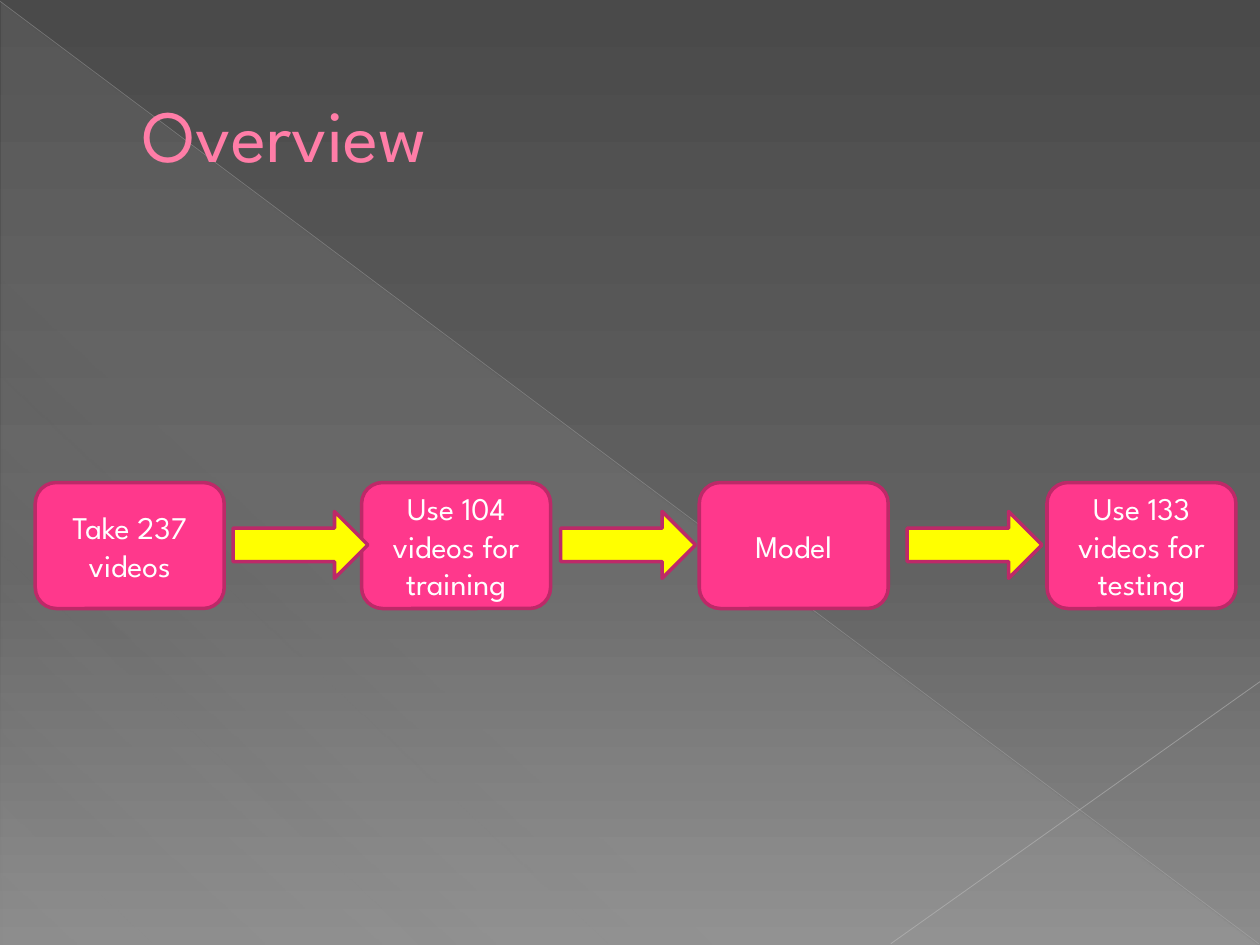
from lxml.etree import SubElement
from pptx import Presentation
from pptx.dml.color import RGBColor
from pptx.enum.shapes import MSO_CONNECTOR as Connector, MSO_SHAPE as Shape
from pptx.enum.text import MSO_ANCHOR as Anchor, PP_ALIGN as Align
from pptx.oxml import parse_xml
from pptx.oxml.ns import nsdecls, qn
from pptx.util import Inches, Pt

COLUMNS, ROWS = 100, 75


def color(hex_value):
    return RGBColor.from_string(hex_value)


def set_gradient(properties, stops, angle):
    """Replace a solid fill with (position %, colour, opacity %) stops."""
    stop_xml = "".join(
        f'<a:gs pos="{position * 1000}"><a:srgbClr val="{shade}">'
        f'<a:alpha val="{opacity * 1000}"/></a:srgbClr></a:gs>'
        for position, shade, opacity in stops)
    gradient = parse_xml(
        f'<a:gradFill {nsdecls("a")} rotWithShape="1"><a:gsLst>{stop_xml}</a:gsLst>'
        f'<a:lin ang="{angle * 60000}" scaled="0"/></a:gradFill>')
    properties.replace(properties.find(qn("a:solidFill")), gradient)


class FlowSlide:
    font = "League Spartan"
    title_color, title_edge = "FF7DA7", "B12761"
    step_fill, arrow_fill, border = "FF388C", "FFFF00", "BD2968"

    def __init__(self, deck):
        self.slide = deck.slides.add_slide(deck.slide_layouts[5])
        self.column = deck.slide_width / COLUMNS
        self.row = deck.slide_height / ROWS

    def grid(self, *lengths):
        """Turn alternating columns and rows into slide lengths."""
        units = (self.column, self.row) * 2
        return [round(length * unit) for length, unit in zip(lengths, units)]

    def background(self, stops, angle):
        self.slide.background.fill.solid()
        properties = self.slide.element.find(".//" + qn("p:bgPr"))
        set_gradient(properties, stops, angle)

    def shape(self, kind, box, fill):
        shape = self.slide.shapes.add_shape(kind, *self.grid(*box))
        shape.shadow.inherit = False
        shape.fill.solid()
        shape.fill.fore_color.rgb = color(fill)
        shape.line.color.rgb = color(self.border)
        shape.line.width = Pt(2)
        return shape

    def facet(self, box, stops, angle):
        """Add a borderless, translucent triangle."""
        triangle = self.shape(Shape.RIGHT_TRIANGLE, box, stops[0][1])
        triangle.line.fill.background()
        set_gradient(triangle.element.spPr, stops, angle)

    def hairline(self, ends, shade, width, opacity):
        line = self.slide.shapes.add_connector(Connector.STRAIGHT, *self.grid(*ends))
        line.line.color.rgb = color(shade)
        line.line.width = Pt(width)
        properties = line.element.spPr
        SubElement(properties.find(".//" + qn("a:srgbClr")), qn("a:alpha"),
                   val=str(opacity * 1000))
        SubElement(properties, qn("a:effectLst"))

    def style_run(self, run, size, shade):
        run.font.name = self.font
        run.font.size = Pt(size)
        run.font.color.rgb = color(shade)

    def title(self, text, box):
        title = self.slide.shapes.title
        title.left, title.top, title.width, title.height = self.grid(*box)
        frame = title.text_frame
        frame.text = text
        frame.vertical_anchor = Anchor.MIDDLE
        heading = frame.paragraphs[0]
        heading.alignment = Align.LEFT
        paragraph_properties = heading._p.get_or_add_pPr()
        paragraph_properties.set("marL", str(Inches(0.53)))
        paragraph_properties.set("indent", "0")
        run = heading.runs[0]
        self.style_run(run, 42, self.title_color)
        run.font._element.insert(0, parse_xml(
            f'<a:ln {nsdecls("a")} w="{Pt(0.5)}"><a:solidFill>'
            f'<a:srgbClr val="{self.title_edge}"/></a:solidFill></a:ln>'))
        # Bring the title in front of the backdrop.
        title.element.getparent().append(title.element)

    def step(self, text, left):
        box = self.shape(Shape.ROUNDED_RECTANGLE, (left, 38.3, 15, 10), self.step_fill)
        frame = box.text_frame
        frame.text = text
        frame.word_wrap = True
        frame.vertical_anchor = Anchor.MIDDLE
        frame.paragraphs[0].alignment = Align.CENTER
        self.style_run(frame.paragraphs[0].runs[0], 18, "FFFFFF")

    def arrow(self, left):
        self.shape(Shape.RIGHT_ARROW, (left, 40.6, 10.7, 5.3), self.arrow_fill)


def main():
    deck = Presentation()
    deck.slide_width, deck.slide_height = Inches(10), Inches(7.5)
    overview = FlowSlide(deck)

    overview.background(
        [(0, "4A4A4A", 100), (60, "626262", 100), (100, "8C8C8C", 100)], 90)
    overview.facet((0.1, 0.2, 99.8, 74.8),
                   [(0, "D2D2D2", 10), (70, "D2D2D2", 8), (100, "D2D2D2", 1)], 133)
    overview.hairline((0, 0.1, 99.9, 74.9), "BFBFBF", 0.39, 35)
    overview.hairline((100, 54.1, 70.7, 74.9), "C6C6C6", 0.47, 45)
    overview.title("Overview", (5, 2.9, 90, 15.3))

    steps = [("Take 237 videos", 2.8), ("Use 104 videos for training", 28.7),
             ("Model", 55.5), ("Use 133 videos for testing", 83.1)]
    for text, left in steps:
        overview.step(text, left)
    for left in (18.5, 44.5, 72):
        overview.arrow(left)

    deck.save("out.pptx")


if __name__ == "__main__":
    main()
